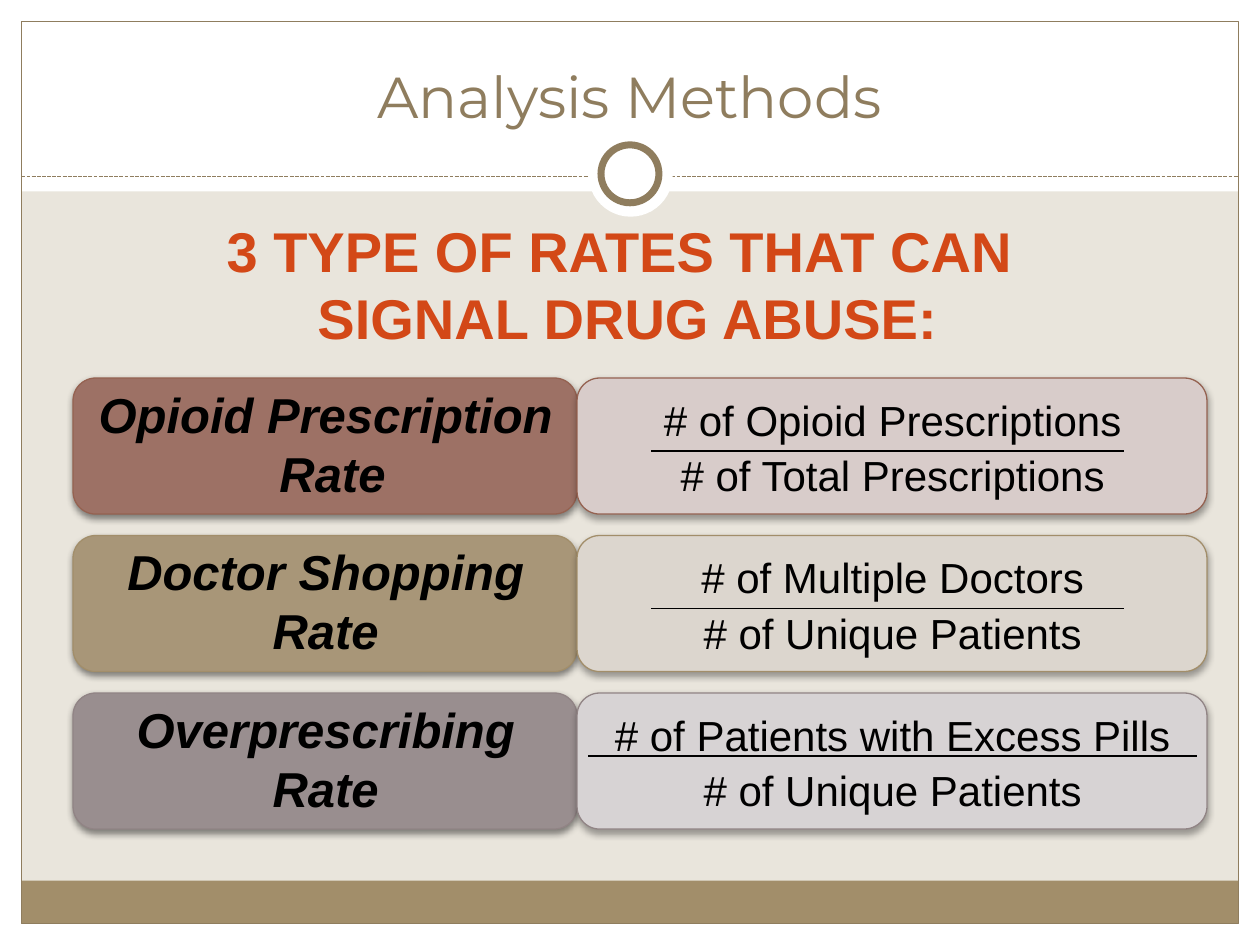
from dataclasses import dataclass

from lxml.etree import SubElement
from pptx import Presentation
from pptx.dml.color import RGBColor
from pptx.enum.dml import MSO_LINE
from pptx.enum.shapes import MSO_CONNECTOR, MSO_SHAPE
from pptx.enum.text import MSO_ANCHOR, MSO_AUTO_SIZE, PP_ALIGN
from pptx.oxml.ns import qn
from pptx.util import Emu, Pt

SCALE = 9144
WHITE, BLACK, TAN, BROWN = "FFFFFF", "000000", "A28E6A", "8F7D5E"


@dataclass
class Box:
    left: int
    top: int
    width: int
    height: int

    def emu(self) -> list[Emu]:
        return [px(n) for n in (self.left, self.top, self.width, self.height)]


@dataclass
class Rate:
    name: list[str]
    ratio: list[str]
    dark: str
    light: str
    edge: str
    left: int = 492
    width: int = 433
    start: int = 517
    end: int = 892
    drop: int = 58


def px(count: int) -> Emu:
    return Emu(count * SCALE)


def color(code: str) -> RGBColor:
    return RGBColor.from_string(code)


def add_shape(slide, kind: MSO_SHAPE, box: Box, fill: str = "",
              edge: str = "", width: float = 0.75):
    shape = slide.shapes.add_shape(kind, *box.emu())
    shape.shadow.inherit = False
    if fill:
        shape.fill.solid()
        shape.fill.fore_color.rgb = color(fill)
    else:
        shape.fill.background()
    if edge:
        shape.line.color.rgb = color(edge)
        shape.line.width = Pt(width)
    else:
        shape.line.fill.background()
    return shape


def add_card(slide, box: Box, fill: str, edge: str, alpha: int) -> None:
    card = add_shape(slide, MSO_SHAPE.ROUNDED_RECTANGLE, box, fill, edge)
    effect = card._element.spPr.find(qn("a:effectLst"))
    shade = SubElement(effect, qn("a:outerShdw"), blurRad=str(Pt(4)),
                       dist=str(Pt(2)), dir="5400000", rotWithShape="0")
    tint = SubElement(shade, qn("a:srgbClr"), val=BLACK)
    SubElement(tint, qn("a:alpha"), val=str(alpha * 1000))


def add_line(slide, start: int, end: int, top: int, tint: str):
    line = slide.shapes.add_connector(
        MSO_CONNECTOR.STRAIGHT, px(start), px(top), px(end), px(top))
    line.line.color.rgb = color(tint)
    line.line.width = Pt(0.75)
    SubElement(line._element.spPr, qn("a:effectLst"))
    return line


def set_text(frame, lines: list[str], size: int, tint: str,
             face: str = "Arial", bold: bool = False,
             slant: bool = False, gap: int = 0) -> None:
    frame.word_wrap = True
    frame.auto_size = MSO_AUTO_SIZE.NONE
    frame.text = "\n".join(lines)
    for para in frame.paragraphs:
        para.alignment = PP_ALIGN.CENTER
        para.space_before = Pt(gap)
        for run in para.runs:
            font = run.font
            font.name, font.size = face, Pt(size)
            font.bold, font.italic = bold, slant
            font.color.rgb = color(tint)


def add_text(slide, box: Box, lines: list[str], size: int, tint: str,
             **style) -> None:
    frame = slide.shapes.add_textbox(*box.emu()).text_frame
    set_text(frame, lines, size, tint, **style)


def add_frame(slide) -> None:
    bands = [
        (Box(0, 733, 1000, 17), WHITE),
        (Box(0, 0, 1000, 152), WHITE),
        (Box(0, 0, 17, 750), WHITE),
        (Box(983, 0, 17, 750), WHITE),
        (Box(17, 699, 966, 34), TAN),
    ]
    for box, fill in bands:
        add_shape(slide, MSO_SHAPE.RECTANGLE, box, fill)
    add_shape(slide, MSO_SHAPE.RECTANGLE, Box(17, 17, 966, 716), edge=BROWN)
    rule = add_line(slide, 17, 983, 140, BROWN)
    rule.line.dash_style = MSO_LINE.SQUARE_DOT
    add_shape(slide, MSO_SHAPE.OVAL, Box(467, 105, 67, 67), WHITE)
    add_shape(slide, MSO_SHAPE.OVAL, Box(477, 115, 46, 46), WHITE, BROWN, 4)


def add_title(slide) -> None:
    title = slide.shapes.title
    title.left, title.top, title.width, title.height = Box(
        33, 25, 933, 83).emu()
    set_text(title.text_frame, ["Analysis Methods"], 33, BROWN, "Montserrat")
    title.text_frame.vertical_anchor = MSO_ANCHOR.BOTTOM
    slide.shapes._spTree.append(title._element)


def add_rate(slide, rate: Rate, top: int) -> None:
    add_card(slide, Box(58, top, 400, 108), rate.dark, rate.edge, 45)
    add_text(slide, Box(67, top, 383, 92), rate.name, 28, BLACK,
             bold=True, slant=True)
    add_card(slide, Box(458, top, 500, 108), rate.light, rate.edge, 35)
    add_line(slide, rate.start, rate.end, top + rate.drop, BLACK)
    add_text(slide, Box(rate.left, top + 8, rate.width, 100), rate.ratio,
             24, BLACK, gap=3)


RATES = [
    Rate(["Opioid Prescription ", " Rate"],
         ["# of Opioid Prescriptions", "# of Total Prescriptions"],
         "9D7165", "D8CCCA", "956251"),
    Rate(["Doctor Shopping Rate"],
         ["# of Multiple Doctors", "# of Unique Patients"],
         "A89678", "DCD6CE", TAN),
    Rate(["Overprescribing Rate"],
         ["# of Patients with Excess Pills", "# of Unique Patients"],
         "998E8F", "D7D3D4", "918485", 450, 517, 467, 950, 50),
]


def main() -> None:
    deck = Presentation()
    deck.slide_width, deck.slide_height = px(1000), px(750)
    slide = deck.slides.add_slide(deck.slide_layouts[5])
    slide.background.fill.solid()
    slide.background.fill.fore_color.rgb = color("E9E5DC")
    add_frame(slide)
    add_title(slide)
    for row, rate in enumerate(RATES):
        add_rate(slide, rate, 300 + row * 125)
    add_text(slide, Box(33, 167, 930, 108),
             ["3 TYPE OF RATES THAT CAN ", "SIGNAL DRUG ABUSE:"],
             32, "D34817", bold=True)
    deck.save("out.pptx")


if __name__ == "__main__":
    main()
